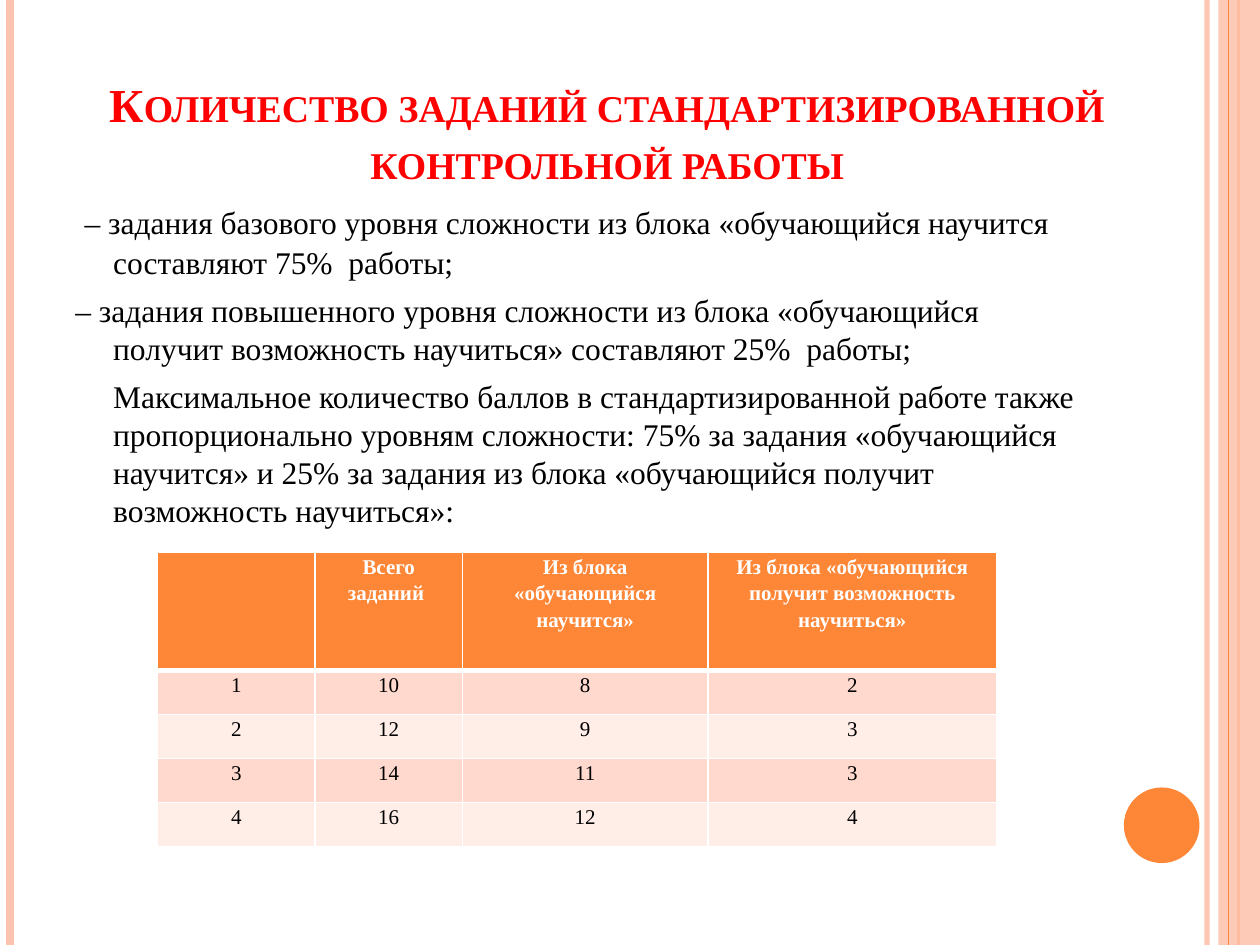
"""Build the slide on the number of tasks in the standardized test paper."""
from lxml import etree
from pptx import Presentation, util as u
from pptx.dml.color import RGBColor
from pptx.enum import shapes, text
from pptx.oxml.ns import qn

ORANGE = RGBColor(0xFE, 0x86, 0x37)
PEACH = RGBColor(0xFE, 0xC3, 0xAE)
BAND_DARK = RGBColor(0xFF, 0xD9, 0xCE)
BAND_LIGHT = RGBColor(0xFF, 0xED, 0xE8)
RED = RGBColor(0xFF, 0, 0)
BLACK = RGBColor(0, 0, 0)
WHITE = RGBColor(0xFF, 0xFF, 0xFF)
SERIF = "Times New Roman"
WIDTH, HEIGHT = 10, 7.5

HEADING = "Количество заданий стандартизированной контрольной работы"
POINTS = [
    [(" ", "Cambria", 24),
     ("– задания базового уровня сложности из блока «обучающийся научится "
      "составляют 75%  работы;", SERIF, 18)],
    [("– задания повышенного уровня сложности из блока «обучающийся получит "
      "возможность научиться» составляют 25%  работы;", SERIF, 18)],
    [("\tМаксимальное количество баллов в стандартизированной работе также "
      "пропорционально уровням сложности: 75% за задания «обучающийся научится» "
      "и 25% за задания из блока «обучающийся получит возможность научиться»:",
      SERIF, 18)],
]
TASKS = [
    ("", "Всего заданий ", "Из блока «обучающийся научится»",
     "Из блока «обучающийся получит возможность научиться»"),
    (1, 10, 8, 2),
    (2, 12, 9, 3),
    (3, 14, 11, 3),
    (4, 16, 12, 4),
]
COLUMNS = (1.25, 1.17, 1.95, 2.29)
HEADER_ROW, DATA_ROW = 0.94, 0.35
STRIPES = [(9.58, 3, PEACH, 93), (0.08, 4.5, PEACH, 100), (9.83, 1.5, ORANGE, 100)]
INNER_STRIPE = (9.75, 0.75, ORANGE, 100)


def box(left, top, width, height):
    return [u.Inches(side) for side in (left, top, width, height)]


def set_alpha(owner, percent):
    for color in owner.iter(qn("a:srgbClr")):
        etree.SubElement(color, qn("a:alpha"), val=str(percent * 1000))


def add_stripe(slide, x, weight, color, opacity):
    stripe = slide.shapes.add_connector(
        shapes.MSO_CONNECTOR.STRAIGHT, u.Inches(x), 0, u.Inches(x), u.Inches(HEIGHT))
    stripe.line.color.rgb = color
    stripe.line.width = u.Pt(weight)
    properties = stripe.element.spPr
    if opacity < 100:
        set_alpha(properties, opacity)
    etree.SubElement(properties, qn("a:effectLst"))


def add_plain(slide, kind, place, color):
    plain = slide.shapes.add_shape(kind, *box(*place))
    plain.shadow.inherit = False
    plain.fill.solid()
    plain.fill.fore_color.rgb = color
    plain.line.fill.background()
    return plain


def style(font, name, size, color, bold=False):
    font.name, font.size, font.bold = name, u.Pt(size), bold
    font.color.rgb = color


def add_border(cell, side, weight):
    edge = etree.SubElement(cell._tc.get_or_add_tcPr(), qn(f"a:{side}"),
                            w=str(u.Pt(weight)))
    fill = etree.SubElement(edge, qn("a:solidFill"))
    etree.SubElement(fill, qn("a:srgbClr"), val=str(WHITE))


def add_heading(slide):
    heading = slide.shapes.title
    heading.left, heading.top, heading.width, heading.height = box(0.5, 0.3, 8.64, 1.25)
    frame = heading.text_frame
    frame.text = HEADING
    frame.auto_size = text.MSO_AUTO_SIZE.NONE
    frame.vertical_anchor = text.MSO_ANCHOR.BOTTOM
    line = frame.paragraphs[0]
    line.alignment = text.PP_ALIGN.CENTER
    run = line.runs[0]
    style(run.font, SERIF, 27, RED, True)
    run.font._element.set("cap", "small")


def add_points(slide):
    frame = slide.shapes.add_textbox(*box(0.5, 1.48, 8.17, 5.6)).text_frame
    frame.word_wrap = True
    for index, pieces in enumerate(POINTS):
        point = frame.add_paragraph() if index else frame.paragraphs[0]
        point.space_before = u.Pt(6 if index else 0)
        layout = point._p.get_or_add_pPr()
        layout.set("marL", str(u.Inches(0.3)))
        layout.set("indent", str(u.Inches(-0.3)))
        for words, name, size in pieces:
            run = point.add_run()
            run.text = words
            style(run.font, name, size, BLACK)


def add_tasks(slide):
    heights = [HEADER_ROW] + [DATA_ROW] * (len(TASKS) - 1)
    table = slide.shapes.add_table(
        len(TASKS), len(COLUMNS), *box(1.25, 4.38, sum(COLUMNS), sum(heights))).table
    for column, width in zip(table.columns, COLUMNS):
        column.width = u.Inches(width)
    for r, values in enumerate(TASKS):
        table.rows[r].height = u.Inches(heights[r])
        header = r == 0
        band = ORANGE if header else BAND_DARK if r % 2 else BAND_LIGHT
        for c, value in enumerate(values):
            cell = table.cell(r, c)
            cell.margin_left = cell.margin_right = u.Inches(0.07)
            cell.margin_top = cell.margin_bottom = 0
            cell.text_frame.text = str(value)
            line = cell.text_frame.paragraphs[0]
            line.alignment = text.PP_ALIGN.CENTER
            line.line_spacing = 1.15
            for run in line.runs:
                style(run.font, SERIF, 12, WHITE if header else BLACK, header)
            for side, weight in (("lnL", 1), ("lnR", 1), ("lnT", 3 if r == 1 else 1),
                                 ("lnB", 3 if header else 1)):
                add_border(cell, side, weight)
            cell.fill.solid()
            cell.fill.fore_color.rgb = band


def main():
    deck = Presentation()
    deck.slide_width, deck.slide_height = u.Inches(WIDTH), u.Inches(HEIGHT)
    slide = deck.slides.add_slide(deck.slide_layouts[5])
    for stripe in STRIPES:
        add_stripe(slide, *stripe)
    margin = add_plain(slide, shapes.MSO_SHAPE.RECTANGLE, (9.67, 0, 0.33, HEIGHT), PEACH)
    set_alpha(margin.element.spPr, 87)
    add_stripe(slide, *INNER_STRIPE)
    add_plain(slide, shapes.MSO_SHAPE.OVAL, (8.92, 6.25, 0.6, 0.6), ORANGE)
    add_heading(slide)
    add_points(slide)
    add_tasks(slide)
    deck.save("out.pptx")


if __name__ == "__main__":
    main()
